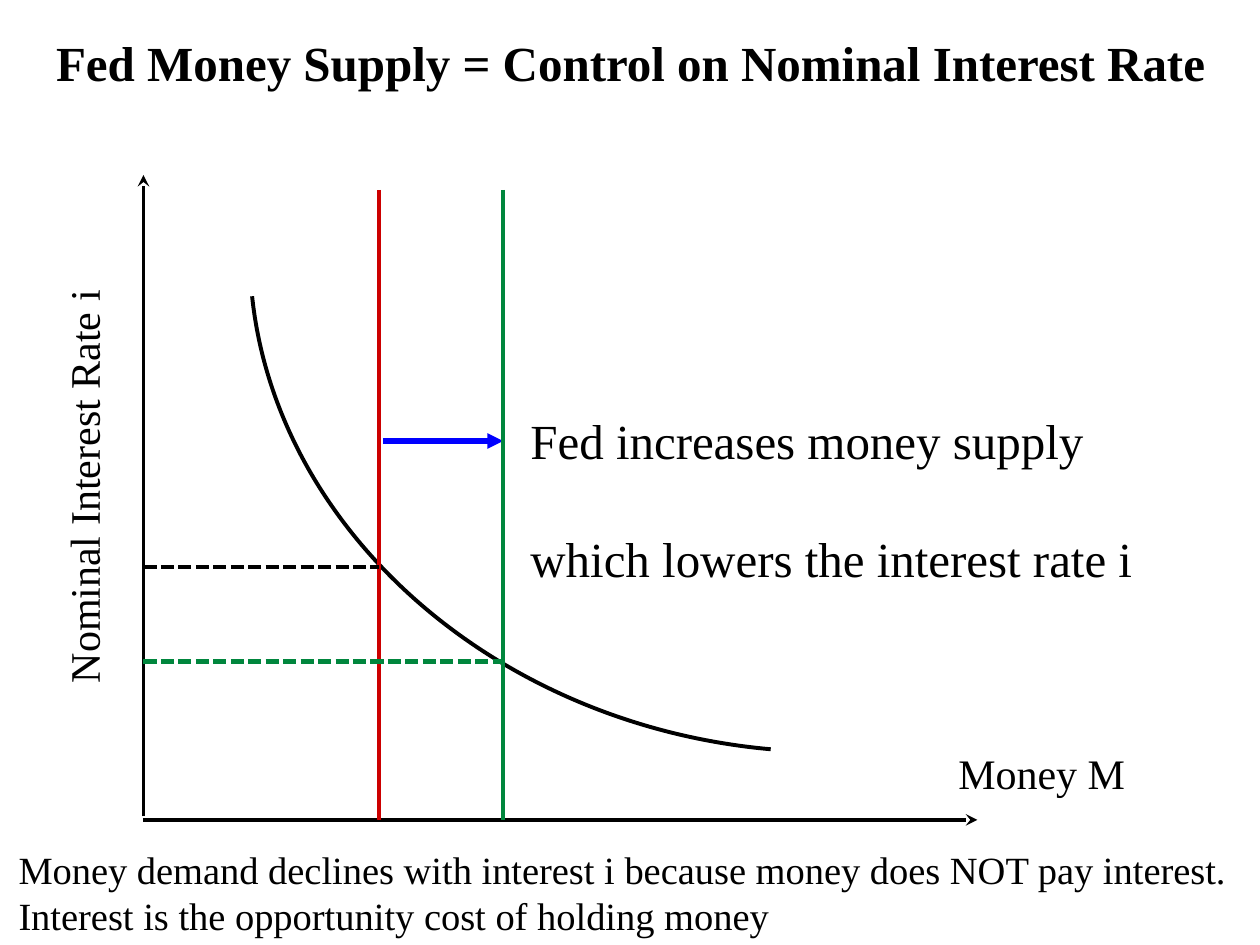
from lxml import etree
from pptx import Presentation
from pptx import util as u
from pptx.dml.color import RGBColor
from pptx.enum import dml, shapes, text
from pptx.oxml.ns import qn

FONT = "Times New Roman"
BLACK, RED, GREEN, BLUE = "000000", "CC0000", "00863D", "0000FF"
AXIS, BASE, TOP = 82, 468.5, 108.5
OLD_M, NEW_M = 216.5, 287.5
OLD_I, NEW_I = 324, 378


def color(hue):
    return RGBColor.from_string(hue)


def add_line(slide, start, end, hue, width, dash=False, arrow=None):
    ends = [u.Pt(v) for v in (*start, *end)]
    link = slide.shapes.add_connector(shapes.MSO_CONNECTOR.STRAIGHT, *ends)
    link.line.color.rgb = color(hue)
    link.line.width = u.Pt(width)
    if dash:
        link.line.dash_style = dml.MSO_LINE.SQUARE_DOT
    props = link._element.spPr
    if arrow:
        etree.SubElement(props.find(qn("a:ln")), qn("a:tailEnd"), type=arrow)
    etree.SubElement(props, qn("a:effectLst"))


def add_arc(slide, box, turn, angles):
    arc = slide.shapes.add_shape(shapes.MSO_SHAPE.ARC, *[u.Pt(v) for v in box])
    arc.adjustments[0], arc.adjustments[1] = angles
    arc.rotation = turn
    arc.shadow.inherit = False
    arc.fill.background()
    arc.line.color.rgb = color(BLACK)
    arc.line.width = u.Pt(2.25)


def add_text(slide, box, lines, size, bold=False, wrap=True, gap=0, turn=0):
    label = slide.shapes.add_textbox(*[u.Pt(v) for v in box])
    label.rotation = turn
    frame = label.text_frame
    frame.word_wrap = wrap
    frame.auto_size = text.MSO_AUTO_SIZE.SHAPE_TO_FIT_TEXT
    frame.text = "\n".join(lines)
    for i, para in enumerate(frame.paragraphs):
        para.font.name = FONT
        para.font.size = u.Pt(size)
        para.font.bold = bold
        para.font.color.rgb = color(BLACK)
        if i and gap:
            para.space_before = u.Pt(gap)


def main():
    deck = Presentation()
    deck.slide_width, deck.slide_height = u.Pt(720), u.Pt(540)
    slide = deck.slides.add_slide(deck.slide_layouts[6])

    add_arc(slide, (141.8, -113.8, 632.2, 542.2), 188.8, (158.94, 209.41))
    add_line(slide, (AXIS, 466.5), (AXIS, 100), BLACK, 2.25, arrow="stealth")
    add_line(slide, (AXIS, BASE), (558.5, BASE), BLACK, 2.25, arrow="stealth")
    add_text(slide, (540.5, 423.5, 167, 36), ["Money M"], 24)
    add_text(slide, (25, 15, 692.5, 41),
             ["Fed Money Supply = Control on Nominal Interest Rate"],
             28, bold=True, wrap=False)
    add_line(slide, (219, 252), (NEW_M, 252), BLUE, 3, arrow="triangle")
    add_text(slide, (296, 231, 362, 108.5),
             ["Fed increases money supply", "which lowers the interest rate i"],
             28, wrap=False, gap=34)
    add_text(slide, (-81.5, 250.5, 258, 36), ["Nominal Interest Rate i"],
             24, turn=270)
    for money, rate, hue, dash in ((OLD_M, OLD_I, RED, BLACK),
                                   (NEW_M, NEW_I, GREEN, GREEN)):
        add_line(slide, (money, TOP), (money, BASE), hue, 2.5)
        add_line(slide, (AXIS, rate), (money, rate), dash, 2.5, dash=True)
    add_text(slide, (3.5, 480, 732, 60.5),
             ["Money demand declines with interest i because money does NOT pay interest.",
              "Interest is the opportunity cost of holding money"], 22)

    deck.save("out.pptx")


if __name__ == "__main__":
    main()
